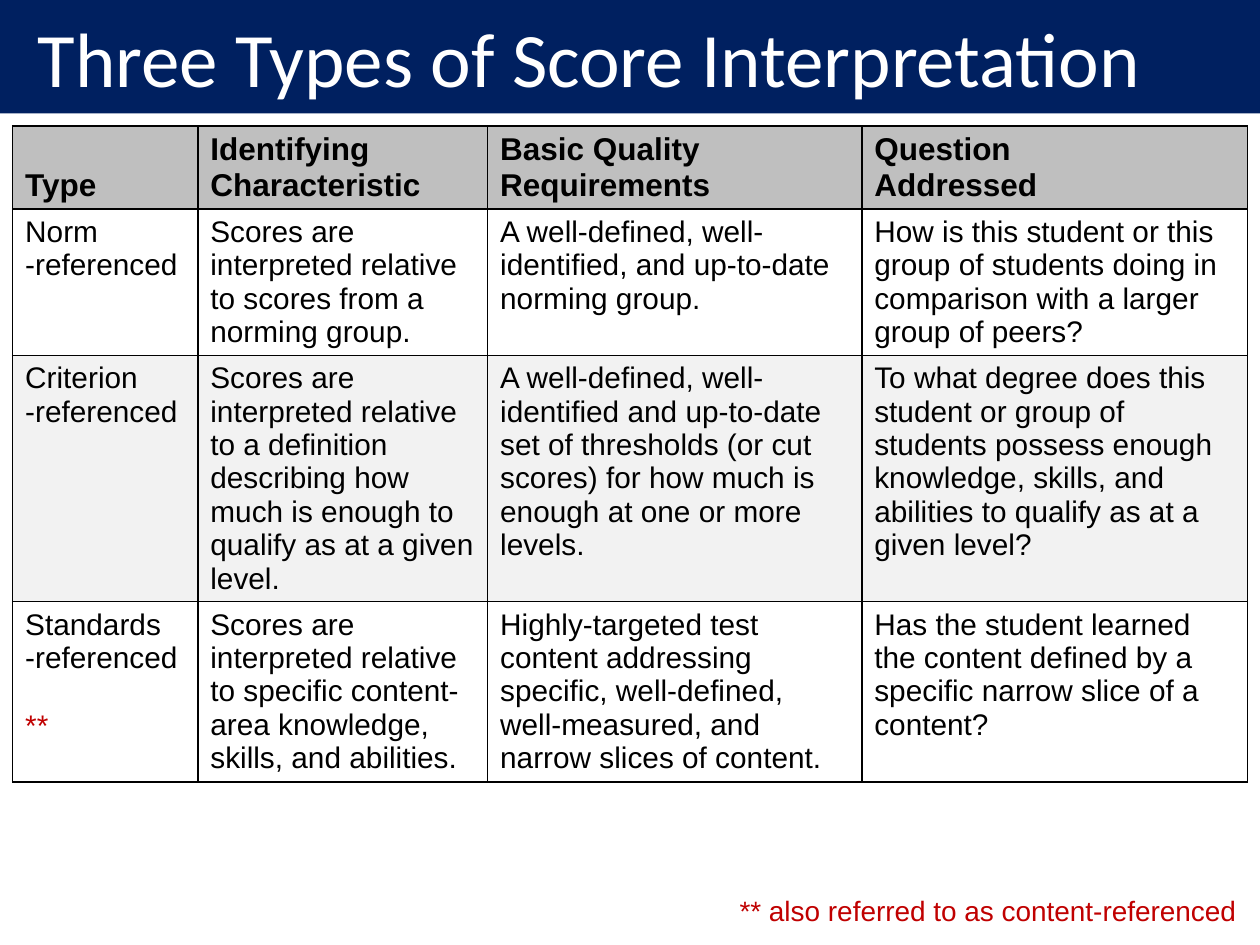
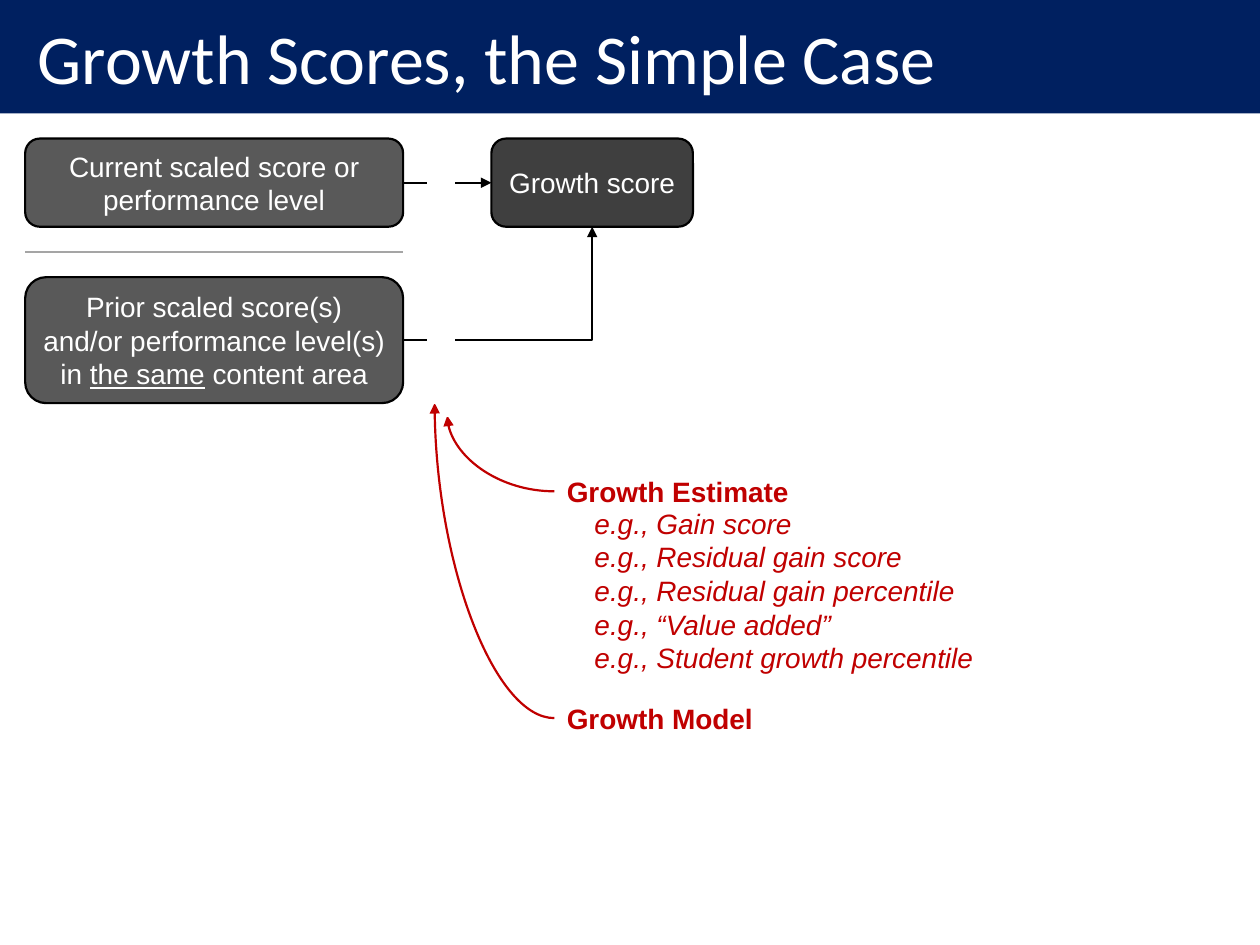
import pptx
import pptx.util
import pptx.dml.color
import pptx.enum.shapes
import pptx.enum.text
import pptx.oxml.ns
import lxml.etree

SHAPE = pptx.enum.shapes.MSO_SHAPE
LINE = pptx.enum.shapes.MSO_CONNECTOR
ALIGN = pptx.enum.text.PP_ALIGN
ANCHOR = pptx.enum.text.MSO_ANCHOR
Pt = pptx.util.Pt
qn = pptx.oxml.ns.qn

COLORS = dict(navy="002060", white="FFFFFF", black="000000", red="C00000",
              header="BFBFBF", stripe="F2F2F2", box="595959",
              result="3F3F3F", rule="A5A5A5")
TITLE_ROWS = 9      # height of the title band on the grid
LINE_WIDTH = 1.25

TABLE_COLS = [14.7, 23, 29.7, 30.6]
TABLE_ROWS = [6.6, 11.6, 19.5, 14.3]
TABLE = [
    ["Type", "Identifying Characteristic", "Basic Quality\nRequirements",
     "Question\nAddressed"],
    ["Norm -referenced",
     "Scores are interpreted relative to scores from a norming group.",
     "A well-defined, well-identified, and up-to-date norming group.",
     "How is this student or this group of students doing in comparison "
     "with a larger group of peers?"],
    ["Criterion -referenced",
     "Scores are interpreted relative to a definition describing how much "
     "is enough to qualify as at a given level.",
     "A well-defined, well-identified and up-to-date set of thresholds "
     "(or cut scores) for how much is enough at one or more levels.",
     "To what degree does this student or group of students possess enough "
     "knowledge, skills, and abilities to qualify as at a given level?"],
    ["Standards -referenced\n**",
     "Scores are interpreted relative to specific content-area knowledge, "
     "skills, and abilities.",
     "Highly-targeted test content addressing specific, well-defined, "
     "well-measured, and narrow slices of content.",
     "Has the student learned the content defined by a specific narrow "
     "slice of a content?"],
]
EXAMPLES = ["Gain score", "Residual gain score", "Residual gain percentile",
            "“Value added”", "Student growth percentile"]


def grid(*cells):
    """Turn grid columns or rows (a tenth of an inch each) into lengths."""
    return [pptx.util.Inches(c / 10) for c in cells]


def rgb(name):
    return pptx.dml.color.RGBColor.from_string(COLORS[name])


def style(tf, size, color, font="Arial", bold=False, italic=False, align=ALIGN.LEFT):
    for p in tf.paragraphs:
        p.alignment = align
        for r in p.runs:
            r.font.name, r.font.size = font, Pt(size)
            r.font.bold, r.font.italic = bold, italic
            r.font.color.rgb = rgb(color)


def set_margins(tf, left, top, right, bottom):
    tf.margin_left, tf.margin_top, tf.margin_right, tf.margin_bottom = grid(
        left, top, right, bottom)


# Shared title band
def add_slide(prs, title, size):
    s = prs.slides.add_slide(prs.slide_layouts[5])
    sp = s.shapes.title
    sp.left, sp.top, sp.width, sp.height = grid(0, 0, 100, TITLE_ROWS)
    sp.fill.solid()
    sp.fill.fore_color.rgb = rgb("navy")
    tf = sp.text_frame
    tf.text = title
    tf.auto_size = pptx.enum.text.MSO_AUTO_SIZE.NONE
    tf.vertical_anchor = ANCHOR.MIDDLE
    set_margins(tf, 3, 0.5, 1, 0.5)
    style(tf, size, "white", font="Calibri")
    return s


# Table
def add_borders(cell):
    tcPr = cell._tc.get_or_add_tcPr()
    for i, side in enumerate(("lnL", "lnR", "lnT", "lnB")):
        ln = lxml.etree.Element(qn("a:" + side), w=str(Pt(1)))
        fill = lxml.etree.SubElement(ln, qn("a:solidFill"))
        lxml.etree.SubElement(fill, qn("a:srgbClr"), val=COLORS["black"])
        tcPr.insert(i, ln)


def add_table(s, left, top):
    box = grid(left, top, sum(TABLE_COLS), sum(TABLE_ROWS))
    table = s.shapes.add_table(len(TABLE), len(TABLE[0]), *box).table
    for col, width in zip(table.columns, grid(*TABLE_COLS)):
        col.width = width
    for row, height in zip(table.rows, grid(*TABLE_ROWS)):
        row.height = height
    for i, texts in enumerate(TABLE):
        head = i == 0
        fill = "header" if head else "white" if i % 2 else "stripe"
        for j, text in enumerate(texts):
            cell = table.cell(i, j)
            cell.text_frame.text = text
            cell.vertical_anchor = ANCHOR.BOTTOM if head else ANCHOR.TOP
            style(cell.text_frame, 18 if head else 17, "black", bold=head)
            cell.fill.solid()
            cell.fill.fore_color.rgb = rgb(fill)
            add_borders(cell)
    return table


# Boxes and labels
def add_box(s, box, text="", fill=None, line=None, preset=SHAPE.FLOWCHART_PROCESS,
            inset=0, **font):
    sp = s.shapes.add_shape(preset, *grid(*box))
    sp.shadow.inherit = False
    if fill:
        sp.fill.solid()
        sp.fill.fore_color.rgb = rgb(fill)
    else:
        sp.fill.background()
    if line:
        sp.line.color.rgb = rgb(line)
        sp.line.width = Pt(LINE_WIDTH)
    else:
        sp.line.fill.background()
    tf = sp.text_frame
    tf.word_wrap = True
    tf.vertical_anchor = ANCHOR.MIDDLE
    set_margins(tf, inset, 0, inset, 0)
    if text:
        tf.text = text
        style(tf, 16, **font)
    return sp


def add_score_box(s, box, text, fill="box"):
    return add_box(s, box, text, fill, "black", SHAPE.ROUNDED_RECTANGLE,
                   color="white", align=ALIGN.CENTER)


# Lines and arrows
def add_line(s, start, end, color, kind=LINE.STRAIGHT, arrow=True):
    cxn = s.shapes.add_connector(kind, *grid(*start, *end))
    cxn.line.color.rgb = rgb(color)
    cxn.line.width = Pt(LINE_WIDTH)
    spPr = cxn._element.spPr
    lxml.etree.SubElement(spPr, qn("a:effectLst"))
    if arrow:
        lxml.etree.SubElement(spPr.find(qn("a:ln")), qn("a:tailEnd"), type="triangle")
    # A single turn: leave sideways, arrive upright
    geom = spPr.find(qn("a:prstGeom"))
    geom.set("prst", geom.get("prst").replace("Connector3", "Connector2"))


def build_interpretation(prs):
    s = add_slide(prs, "Three Types of Score Interpretation", 44)
    table = add_table(s, 1, 10)
    mark = table.cell(3, 0).text_frame.paragraphs[1]
    mark.space_before = Pt(19.5)
    mark.runs[0].font.color.rgb = rgb("red")

    tf = s.shapes.add_textbox(*grid(52.2, 70.4, 46.9, 3.7)).text_frame
    tf.word_wrap = True
    tf.text = "** also referred to as content-referenced"
    style(tf, 16, "red", align=ALIGN.RIGHT)


def build_growth(prs):
    s = add_slide(prs, "Growth Scores, the Simple Case", 40)

    # Red notes and their curved arrows
    for text, row, tip in (("Growth Model", 57, (34.5, 32)),
                           ("Growth Estimate", 39, (35.5, 33))):
        add_box(s, (44, row - 2, 54.5, 4), text, inset=1, color="red", bold=True)
        add_line(s, (44, row), tip, "red", LINE.CURVE)
    add_box(s, (46.2, 39.5, 52.3, 14.7), "\n".join("e.g., " + e for e in EXAMPLES),
            inset=1, color="red", italic=True)

    # Score boxes
    add_score_box(s, (2, 11, 30, 7), "Current scaled score or\nperformance level")
    prior = add_score_box(s, (2, 22, 30, 10),
                          "Prior scaled score(s)\nand/or performance level(s)\nin ")
    p = prior.text_frame.paragraphs[-1]
    for text in ("the same", " content area"):
        p.add_run().text = text
    style(prior.text_frame, 16, "white", align=ALIGN.CENTER)
    p.runs[1].font.underline = True
    add_score_box(s, (39, 11, 16, 7), "Growth score", "result")

    # Flow into the growth score, with a white gap across it
    add_line(s, (32, 27), (47, 18), "black", LINE.ELBOW)
    add_line(s, (32, 14.5), (39, 14.5), "black")
    add_line(s, (2, 20), (32, 20), "rule", arrow=False)
    for step in range(2):
        add_box(s, (34 + step, 10 + step, 1, 22), fill="white", line="white")


def main():
    prs = pptx.Presentation()
    prs.slide_width, prs.slide_height = grid(100, 75)
    build_interpretation(prs)
    build_growth(prs)
    prs.save("out.pptx")


if __name__ == "__main__":
    main()
